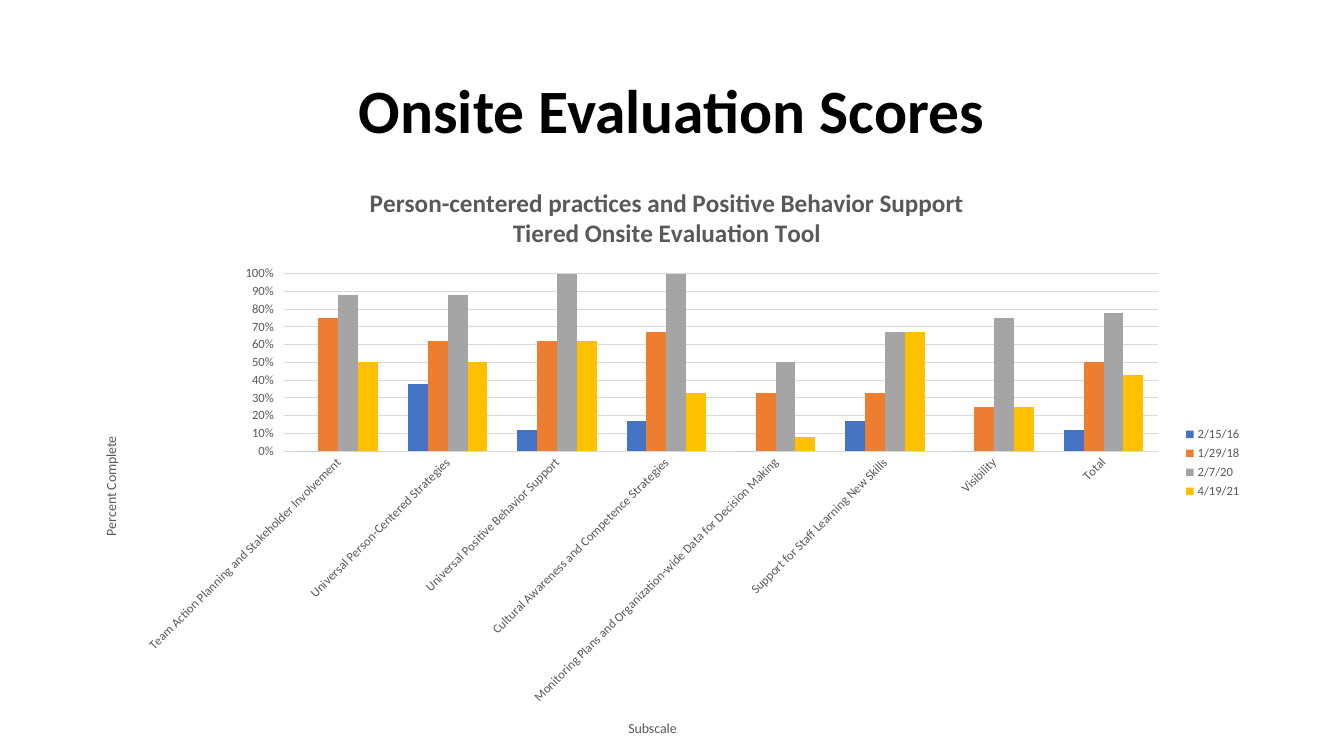
from lxml import etree
from pptx import Presentation
from pptx import util as u
from pptx.chart.data import CategoryChartData
from pptx.dml.color import RGBColor
from pptx.enum import chart as ch, text
from pptx.oxml.ns import qn

# Content
HEADING = "Onsite Evaluation Scores"
CHART_TITLE = ["Person-centered practices and Positive Behavior Support",
               "Tiered Onsite Evaluation Tool"]
SUBSCALES = [
    "Team Action Planning and Stakeholder Involvement",
    "Universal Person-Centered Strategies",
    "Universal Positive Behavior Support",
    "Cultural Awareness and Competence Strategies",
    "Monitoring Plans and Organization-wide Data for Decision Making",
    "Support for Staff Learning New Skills",
    "Visibility",
    "Total",
]
SCORES = [
    ("2/15/16", "4472C4", [0, 0.38, 0.12, 0.17, 0, 0.17, 0, 0.12]),
    ("1/29/18", "ED7D31", [0.75, 0.62, 0.62, 0.67, 0.33, 0.33, 0.25, 0.5]),
    ("2/7/20", "A5A5A5", [0.88, 0.88, 1, 1, 0.5, 0.67, 0.75, 0.78]),
    ("4/19/21", "FFC000", [0.5, 0.5, 0.62, 0.33, 0.08, 0.67, 0.25, 0.43]),
]
GREY, GRID = "595959", "D9D9D9"
CHART_W, CHART_H = 29.49, 14.91  # cm


def rgb(value):
    return RGBColor.from_string(value)


def style(font, size, color, bold=False):
    formats = {"name": "Calibri", "size": u.Pt(size), "bold": bold}
    for key, value in formats.items():
        setattr(font, key, value)
    font.color.rgb = rgb(color)


def rule(line):
    line.color.rgb = rgb(GRID)
    line.width = u.Pt(0.75)


def place(el, inner=False, **lengths):
    """Place a chart part by lengths in cm from the chart's top left corner."""
    for old in el.findall(qn("c:layout")):
        el.remove(old)
    layout = etree.Element(qn("c:layout"))
    manual = etree.SubElement(layout, qn("c:manualLayout"))
    settings = {"layoutTarget": "inner"} if inner else {}
    settings.update(xMode="edge", yMode="edge")
    for key, cm in lengths.items():
        settings[key] = cm / (CHART_W if key in "xw" else CHART_H)
    for key, value in settings.items():
        etree.SubElement(manual, qn("c:" + key)).set("val", str(value))
    before = el.findall(qn("c:tx")) + el.findall(qn("c:legendPos"))
    if before:
        before[-1].addnext(layout)
    else:
        el.insert(0, layout)


def write_title(title, lines, size, bold, x, y):
    tf = title.text_frame
    for i, line in enumerate(lines):
        p = tf.paragraphs[0] if i == 0 else tf.add_paragraph()
        p.alignment = text.PP_ALIGN.CENTER
        r = p.add_run()
        r.text = line
        style(r.font, size, GREY, bold)
    place(title._element, x=x, y=y)


prs = Presentation()
prs.slide_width, prs.slide_height = u.Cm(33.87), u.Cm(19.05)
s = prs.slides.add_slide(prs.slide_layouts[6])

# Heading
sp = s.shapes.add_textbox(u.Cm(2.33), u.Cm(1.02), u.Cm(29.21), u.Cm(3.68))
tf = sp.text_frame
tf.word_wrap = True
tf.vertical_anchor = text.MSO_ANCHOR.MIDDLE
p = tf.paragraphs[0]
p.alignment, p.line_spacing = text.PP_ALIGN.CENTER, 0.9
r = p.add_run()
r.text = HEADING
style(r.font, 44, "000000", True)

# Chart and series
data = CategoryChartData(number_format="0%")
data.categories = SUBSCALES
for name, _, values in SCORES:
    data.add_series(name, values)
chart = s.shapes.add_chart(ch.XL_CHART_TYPE.COLUMN_CLUSTERED, u.Cm(2.06), u.Cm(4.19),
                           u.Cm(CHART_W), u.Cm(CHART_H), data).chart
style(chart.font, 10, "000000")
plot = chart.plots[0]
plot.gap_width, plot.overlap, plot.vary_by_categories = 150, 0, False
for series, (_, color, _) in zip(plot.series, SCORES):
    series.format.fill.solid()
    series.format.fill.fore_color.rgb = rgb(color)
place(chart._chartSpace.chart.plotArea, inner=True, x=5.09, y=2.71, w=22.04, h=4.47)

# Axes
cat, val = chart.category_axis, chart.value_axis
for axis in (cat, val):
    style(axis.tick_labels.font, 9, GREY)
cat.major_tick_mark = ch.XL_TICK_MARK.NONE
rule(cat.format.line)
cat._element.find(qn("c:txPr")).find(qn("a:bodyPr")).set("rot", "-2700000")
scale = {"minimum_scale": 0, "maximum_scale": 1, "major_unit": 0.1,
         "has_major_gridlines": True, "major_tick_mark": ch.XL_TICK_MARK.OUTSIDE}
for key, value in scale.items():
    setattr(val, key, value)
val.tick_labels.number_format = "0%"
val.tick_labels.number_format_is_linked = False
val.format.line.fill.background()
rule(val.major_gridlines.format.line)

# Titles
chart.has_title = True
write_title(chart.chart_title, CHART_TITLE, 18, True, 7.18, 0.42)
write_title(cat.axis_title, ["Subscale"], 10, False, 13.71, 13.86)
write_title(val.axis_title, ["Percent Complete"], 10, False, 0.44, 6.74)
body = next(val.axis_title._element.iter(qn("a:bodyPr")))
body.set("rot", "-5400000")
body.set("vert", "horz")

# Legend
chart.has_legend = True
legend = chart.legend
legend.position = ch.XL_LEGEND_POSITION.RIGHT
legend.include_in_layout = False
style(legend.font, 9, GREY)
place(legend._element, x=27.62, y=6.46, w=1.77, h=2.03)

prs.save("out.pptx")
